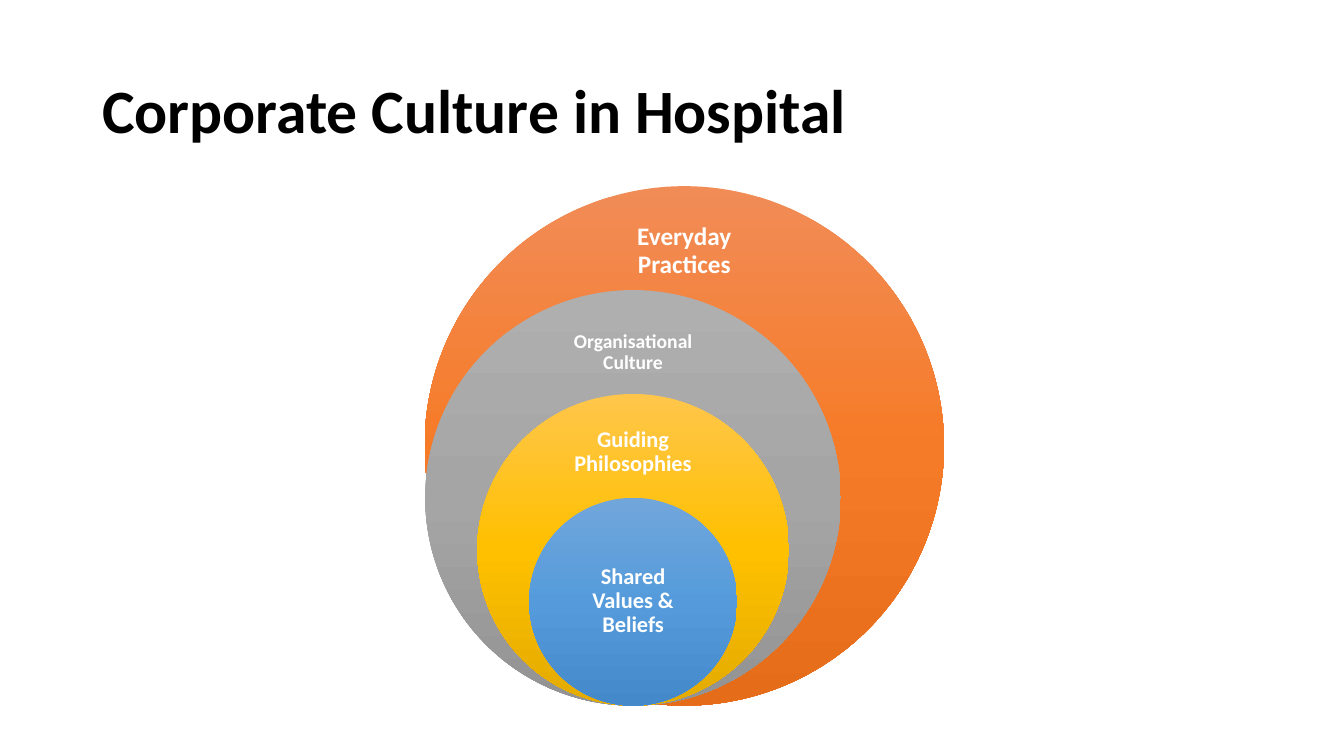
from copy import deepcopy
from dataclasses import dataclass

from pptx import Presentation
from pptx.dml.color import RGBColor as RGB
from pptx.enum.shapes import MSO_SHAPE as SHAPE
from pptx.enum.text import MSO_ANCHOR as ANCHOR, PP_ALIGN as ALIGN
from pptx.oxml.ns import qn
from pptx.util import Pt


@dataclass(frozen=True)
class Theme:
    font: str = "Calibri"
    title_color: str = "000000"
    label_color: str = "FFFFFF"
    title_size: float = 44
    large: float = 18
    medium: float = 16
    small: float = 14
    orange: tuple[str, str, str] = ("F18C57", "F67B28", "E56C19")
    gray: tuple[str, str, str] = ("AFAFAF", "A5A5A5", "939393")
    gold: tuple[str, str, str] = ("FFC64B", "FFC000", "E3AB00")
    blue: tuple[str, str, str] = ("71A6DB", "559BDB", "448ACA")


@dataclass(frozen=True)
class Layer:
    text: str
    colors: tuple[str, str, str]
    size: float
    center_x: float
    label_top: float
    label_height: float
    inset: float


THEME = Theme()
OUTER_DIAMETER = 371
CIRCLE_BOTTOM = 504
LABEL_WIDTH = 104
OUTER_X, INNER_X = 488.8, 452.2

LAYERS = [
    Layer("Everyday Practices", THEME.orange, THEME.large, OUTER_X, 151.9, 55.4, 10),
    Layer("Organisational Culture", THEME.gray, THEME.small, INNER_X, 225.4, 53.3, 8),
    Layer("Guiding Philosophies", THEME.gold, THEME.medium, INNER_X, 298.1, 49.7, 9),
    Layer("Shared Values & Beliefs", THEME.blue, THEME.medium, INNER_X, 392.4, 74.2, 9),
]


def add_text(slide, text: str, left: float, top: float, width: float, height: float,
             size: float, color: str, align: ALIGN, inset_x: float, inset_y: float) -> None:
    sp = slide.shapes.add_textbox(Pt(left), Pt(top), Pt(width), Pt(height))
    tf = sp.text_frame
    tf.word_wrap = True
    tf.vertical_anchor = ANCHOR.MIDDLE
    tf.margin_left = tf.margin_right = Pt(inset_x)
    tf.margin_top = tf.margin_bottom = Pt(inset_y)
    p = tf.paragraphs[0]
    p.text = text
    p.alignment = align
    p.line_spacing = 0.9
    p.font.name = THEME.font
    p.font.size = Pt(size)
    p.font.bold = True
    p.font.color.rgb = RGB.from_string(color)


def fill_gradient(sp, colors: tuple[str, str, str]) -> None:
    sp.fill.gradient()
    sp.fill.gradient_angle = 270  # top to bottom
    # A new gradient has two stops; add the third
    stop_list = sp.element.spPr.find(qn("a:gradFill")).find(qn("a:gsLst"))
    stop_list.append(deepcopy(stop_list[-1]))
    for i, (stop, color) in enumerate(zip(sp.fill.gradient_stops, colors)):
        stop.position = i / 2
        stop.color.rgb = RGB.from_string(color)


def add_layer(slide, layer: Layer, diameter: float) -> None:
    sp = slide.shapes.add_shape(
        SHAPE.OVAL, Pt(layer.center_x - diameter / 2), Pt(CIRCLE_BOTTOM - diameter),
        Pt(diameter), Pt(diameter))
    sp.shadow.inherit = False
    sp.line.fill.background()
    fill_gradient(sp, layer.colors)
    add_text(slide, layer.text, layer.center_x - LABEL_WIDTH / 2, layer.label_top,
             LABEL_WIDTH, layer.label_height, layer.size, THEME.label_color,
             ALIGN.CENTER, layer.inset, layer.inset)


def main() -> None:
    prs = Presentation()
    prs.slide_width, prs.slide_height = Pt(960), Pt(540)
    slide = prs.slides.add_slide(prs.slide_layouts[6])

    # Title
    add_text(slide, "Corporate Culture in Hospital", 66, 28.8, 828, 104.4,
             THEME.title_size, THEME.title_color, ALIGN.LEFT, 7.2, 3.6)

    # Nested circles, each a fifth of the outer diameter smaller
    for i, layer in enumerate(LAYERS):
        add_layer(slide, layer, OUTER_DIAMETER * (5 - i) / 5)

    prs.save("out.pptx")


if __name__ == "__main__":
    main()
